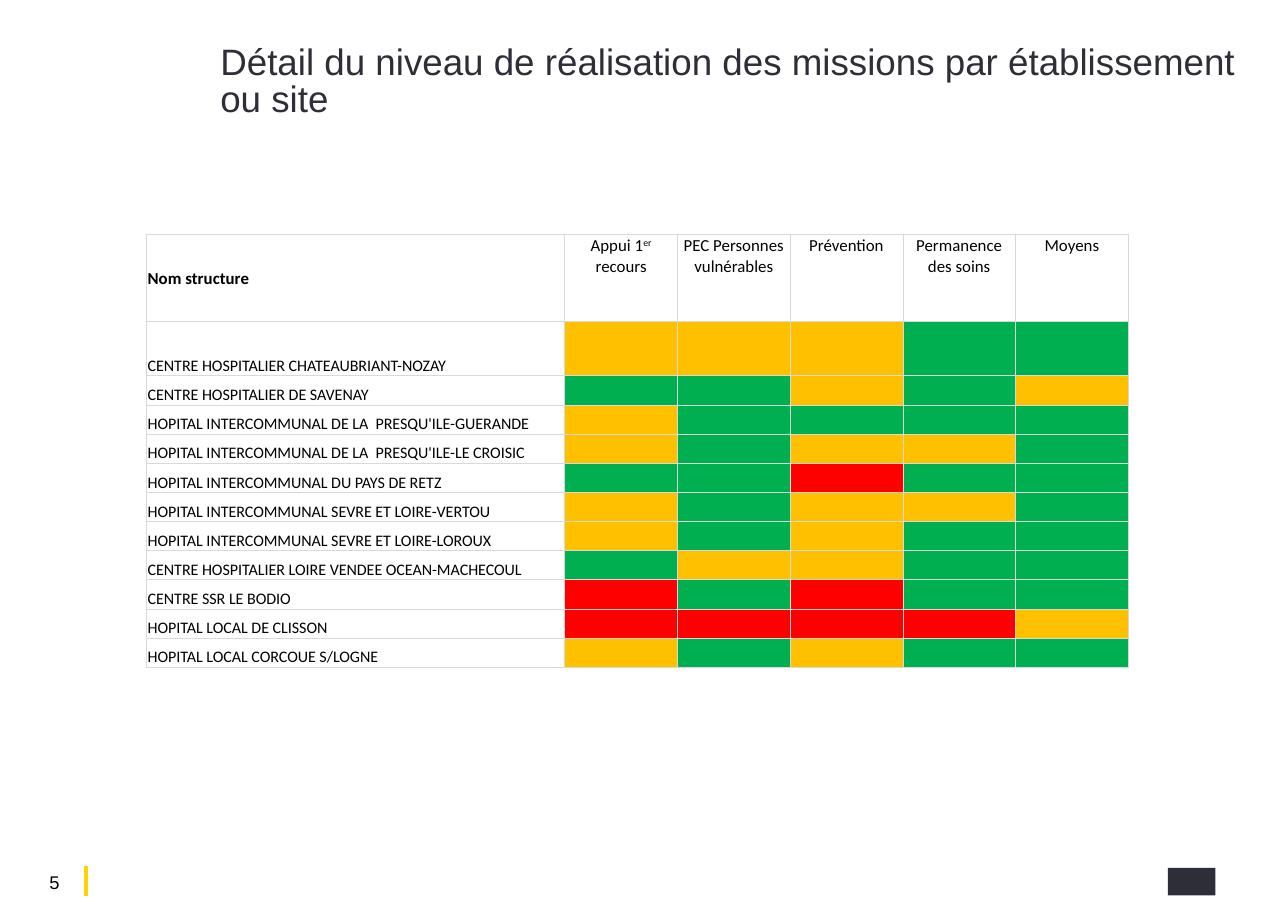
from lxml.etree import SubElement
from pptx import Presentation
from pptx.dml.color import RGBColor
from pptx.enum.shapes import MSO_CONNECTOR, MSO_SHAPE
from pptx.enum.text import MSO_ANCHOR as Anchor, MSO_AUTO_SIZE as AutoSize, PP_ALIGN as Align
from pptx.oxml.ns import qn
from pptx.util import Inches, Pt

WIDTH, HEIGHT = Inches(11.69), Inches(8.27)
COLORS = {
    "ink": "2E2E38", "black": "000000", "white": "FFFFFF", "accent": "FFD200",
    "border": "D9D9D9", "O": "FFC000", "G": "00B050", "R": "FF0000",
}
HEADERS = ["Nom structure", "Appui 1^er^ recours", "PEC Personnes vulnérables",
           "Prévention", "Permanence des soins", "Moyens"]
# One letter per mission: G = green, O = orange, R = red
RATINGS = [
    ("CENTRE HOSPITALIER CHATEAUBRIANT-NOZAY", "OOOGG"),
    ("CENTRE HOSPITALIER DE SAVENAY", "GGOGO"),
    ("HOPITAL INTERCOMMUNAL DE LA  PRESQU'ILE-GUERANDE", "OGGGG"),
    ("HOPITAL INTERCOMMUNAL DE LA  PRESQU'ILE-LE CROISIC", "OGOOG"),
    ("HOPITAL INTERCOMMUNAL DU PAYS DE RETZ", "GGRGG"),
    ("HOPITAL INTERCOMMUNAL SEVRE ET LOIRE-VERTOU", "OGOOG"),
    ("HOPITAL INTERCOMMUNAL SEVRE ET LOIRE-LOROUX", "OGOGG"),
    ("CENTRE HOSPITALIER LOIRE VENDEE OCEAN-MACHECOUL", "GOOGG"),
    ("CENTRE SSR LE BODIO", "RGRGG"),
    ("HOPITAL LOCAL DE CLISSON", "RRRRO"),
    ("HOPITAL LOCAL CORCOUE S/LOGNE", "OGOGG"),
]
# Percentages of the table's width and height
COLUMN_SHARES = [42.6] + [11.48] * 5
ROW_SHARES = [20, 12.6] + [6.74] * 10


def color(name):
    return RGBColor.from_string(COLORS[name])


def area(left, top, width, height):
    """Turn percentages of the slide into lengths."""
    return (int(WIDTH * left / 100), int(HEIGHT * top / 100),
            int(WIDTH * width / 100), int(HEIGHT * height / 100))


def format_span(span, size, name, font="Arial", bold=False):
    span.font.size, span.font.name, span.font.bold = Pt(size), font, bold
    span.font.color.rgb = color(name)


def fill_frame(frame, text, size, name, align, top=0):
    frame.auto_size, frame.word_wrap = AutoSize.NONE, True
    frame.vertical_anchor = Anchor.TOP
    frame.margin_left = frame.margin_right = frame.margin_bottom = 0
    frame.margin_top = Inches(top)
    frame.text = text
    para = frame.paragraphs[0]
    para.alignment, para.line_spacing = align, 0.85
    format_span(para.runs[0], size, name)


def add_title(page, box):
    title = page.shapes.title
    title.left, title.top, title.width, title.height = box
    fill_frame(title.text_frame,
               "Détail du niveau de réalisation des missions par établissement ou site",
               24, "ink", Align.LEFT)


def style_cell(cell, fill):
    cell.margin_left = cell.margin_right = cell.margin_top = Inches(0.01)
    cell.margin_bottom = 0
    properties = cell._tc.get_or_add_tcPr()
    for side in ("a:lnL", "a:lnR", "a:lnT", "a:lnB"):
        line = SubElement(properties, qn(side), w=str(Pt(0.5)))
        solid = SubElement(line, qn("a:solidFill"))
        SubElement(solid, qn("a:srgbClr"), val=COLORS["border"])
    cell.fill.solid()
    cell.fill.fore_color.rgb = color(fill)


def write_cell(cell, text, size, anchor, align=Align.LEFT, bold=False):
    """Write a label; text between carets is superscript."""
    cell.vertical_anchor = anchor
    para = cell.text_frame.paragraphs[0]
    para.alignment = align
    for index, part in enumerate(text.split("^")):
        span = para.add_run()
        span.text = part
        format_span(span, size, "black", "Calibri", bold)
        if index % 2:
            span._r.get_or_add_rPr().set("baseline", "30000")


def add_ratings(page, box):
    table = page.shapes.add_table(len(ROW_SHARES), len(COLUMN_SHARES), *box).table
    table.first_row = table.horz_banding = False
    for column, share in zip(table.columns, COLUMN_SHARES):
        column.width = int(box[2] * share / 100)
    for row, share in zip(table.rows, ROW_SHARES):
        row.height = int(box[3] * share / 100)

    # Header row
    for index, text in enumerate(HEADERS):
        cell = table.cell(0, index)
        style_cell(cell, "white")
        if index:
            write_cell(cell, text, 11, Anchor.TOP, Align.CENTER)
        else:
            write_cell(cell, text, 11, Anchor.MIDDLE, bold=True)

    # One row per hospital, coloured by mission
    for row, (hospital, levels) in enumerate(RATINGS, 1):
        name_cell = table.cell(row, 0)
        style_cell(name_cell, "white")
        write_cell(name_cell, hospital, 10.5, Anchor.BOTTOM)
        for column, level in enumerate(levels, 1):
            cell = table.cell(row, column)
            style_cell(cell, level)
            SubElement(cell.text_frame.paragraphs[0]._p, qn("a:endParaRPr"), sz="1050")


def add_page_number(page, box):
    left, top, width, height = box
    number = page.shapes.add_textbox(left, top, width, height)
    fill_frame(number.text_frame, "5", 12, "black", Align.CENTER, top=0.05)
    # Accent bar right of the number
    x = int(left + width * 1.08)
    bar = page.shapes.add_connector(MSO_CONNECTOR.STRAIGHT, x, int(top - height * 0.15),
                                    x, int(top + height * 1.15))
    bar.line.color.rgb, bar.line.width = color("accent"), Pt(3)
    SubElement(bar._element.spPr, qn("a:effectLst"))


def add_corner_block(page, box):
    block = page.shapes.add_shape(MSO_SHAPE.RECTANGLE, *box)
    block.shadow.inherit = False
    block.fill.solid()
    block.fill.fore_color.rgb = color("ink")
    block.line.fill.background()


def main():
    deck = Presentation()
    deck.slide_width, deck.slide_height = WIDTH, HEIGHT
    page = deck.slides.add_slide(deck.slide_layouts[5])
    add_page_number(page, area(2.14, 95.41, 4.19, 2.54))
    add_corner_block(page, area(90.68, 95.28, 3.68, 3.02))
    add_title(page, area(17.11, 4.96, 79.04, 7.01))
    add_ratings(page, area(11.38, 25.76, 76.22, 47.52))
    deck.save("out.pptx")


if __name__ == "__main__":
    main()
